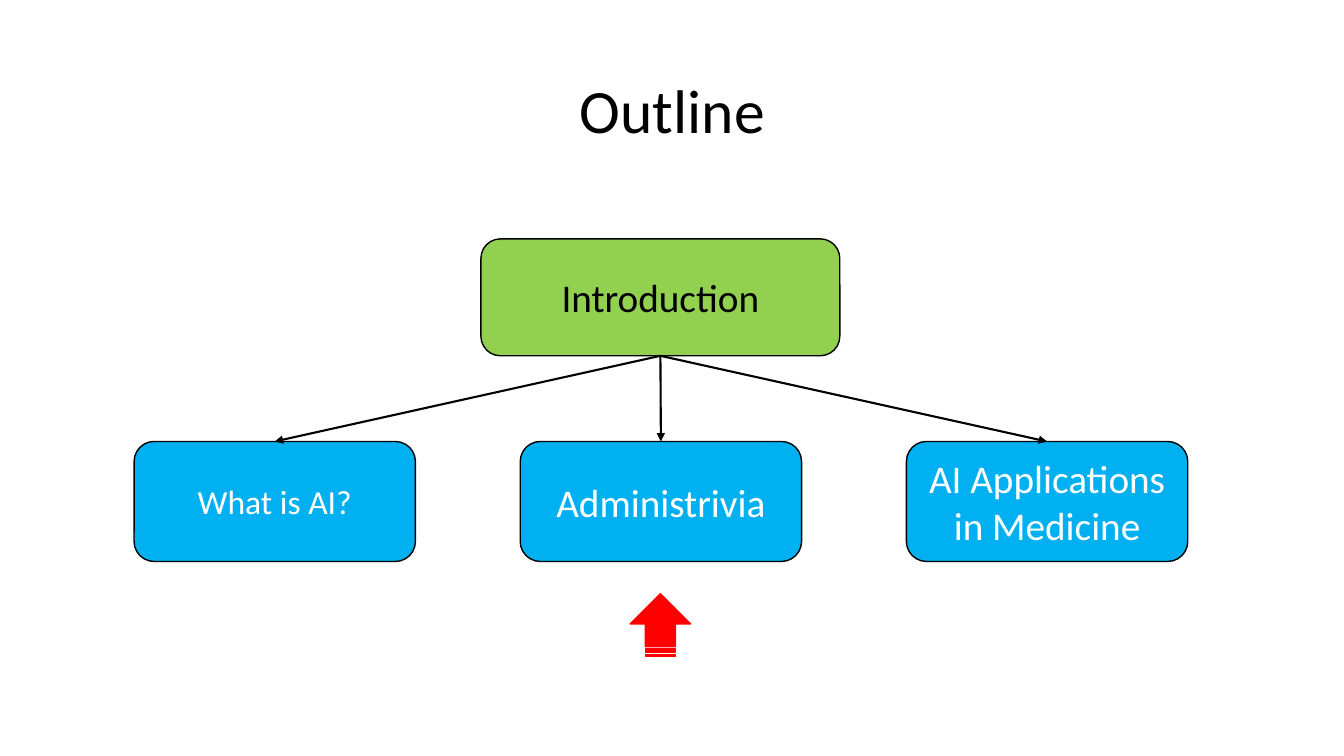
from lxml import etree
from pptx import Presentation
from pptx import util as u
from pptx.dml.color import RGBColor
from pptx.enum import shapes, text
from pptx.oxml.ns import qn

PX = 9144
BLACK, WHITE, GREEN, BLUE, RED = "000000", "FFFFFF", "92D050", "00B0F0", "FF0000"
TOPICS = [("What is AI?", 24), ("Administrivia", 28), ("AI Applications in Medicine", 28)]


def color(value):
    return RGBColor.from_string(value)


class OutlineSlide:
    """Draws styled elements on one slide, with lengths in px."""

    font = "Calibri"

    def __init__(self, presentation):
        self.slide = presentation.slides.add_slide(presentation.slide_layouts[6])

    def label(self, shape, content, size, ink):
        frame = shape.text_frame
        frame.word_wrap = True
        frame.vertical_anchor = text.MSO_ANCHOR.MIDDLE
        frame.text = content
        paragraph = frame.paragraphs[0]
        paragraph.alignment = text.PP_ALIGN.CENTER
        font = paragraph.runs[0].font
        font.name, font.size = self.font, u.Pt(size)
        font.color.rgb = color(ink)
        return paragraph

    def title(self, content, *bounds):
        box = self.slide.shapes.add_textbox(*(n * PX for n in bounds))
        self.label(box, content, 44, BLACK).line_spacing = 0.9

    def figure(self, kind, fill, line, *bounds):
        shape = self.slide.shapes.add_shape(kind, *(n * PX for n in bounds))
        shape.shadow.inherit = False
        shape.fill.solid()
        shape.fill.fore_color.rgb = color(fill)
        shape.line.color.rgb = color(line)
        shape.line.width = u.Pt(1)
        return shape

    def node(self, content, size, ink, fill, *bounds):
        shape = self.figure(shapes.MSO_SHAPE.ROUNDED_RECTANGLE, fill, BLACK, *bounds)
        self.label(shape, content, size, ink)
        return shape

    def arrow(self, parent, child):
        connector = self.slide.shapes.add_connector(shapes.MSO_CONNECTOR.STRAIGHT, 0, 0, 0, 0)
        connector.begin_connect(parent, 2)
        connector.end_connect(child, 0)
        connector.line.color.rgb = color(BLACK)
        connector.line.width = u.Pt(1.5)
        properties = connector._element.spPr
        etree.SubElement(properties.find(qn("a:ln")), qn("a:tailEnd"), type="triangle")
        etree.SubElement(properties, qn("a:effectLst"))

    def marker(self, *bounds):
        shape = self.figure(shapes.MSO_SHAPE.STRIPED_RIGHT_ARROW, RED, RED, *bounds)
        shape.rotation = 270


def main():
    presentation = Presentation()
    presentation.slide_width, presentation.slide_height = 1333 * PX, 750 * PX
    outline = OutlineSlide(presentation)
    outline.title("Outline", 92, 40, 1150, 145)
    introduction = outline.node("Introduction", 28, BLACK, GREEN, 477, 237, 356, 116)
    topics = [
        outline.node(content, size, WHITE, BLUE, 133 + 383 * column, 438, 279, 119)
        for column, (content, size) in enumerate(TOPICS)
    ]
    for topic in topics:
        outline.arrow(introduction, topic)
    outline.marker(624, 590, 62, 60)
    presentation.save("out.pptx")


if __name__ == "__main__":
    main()
